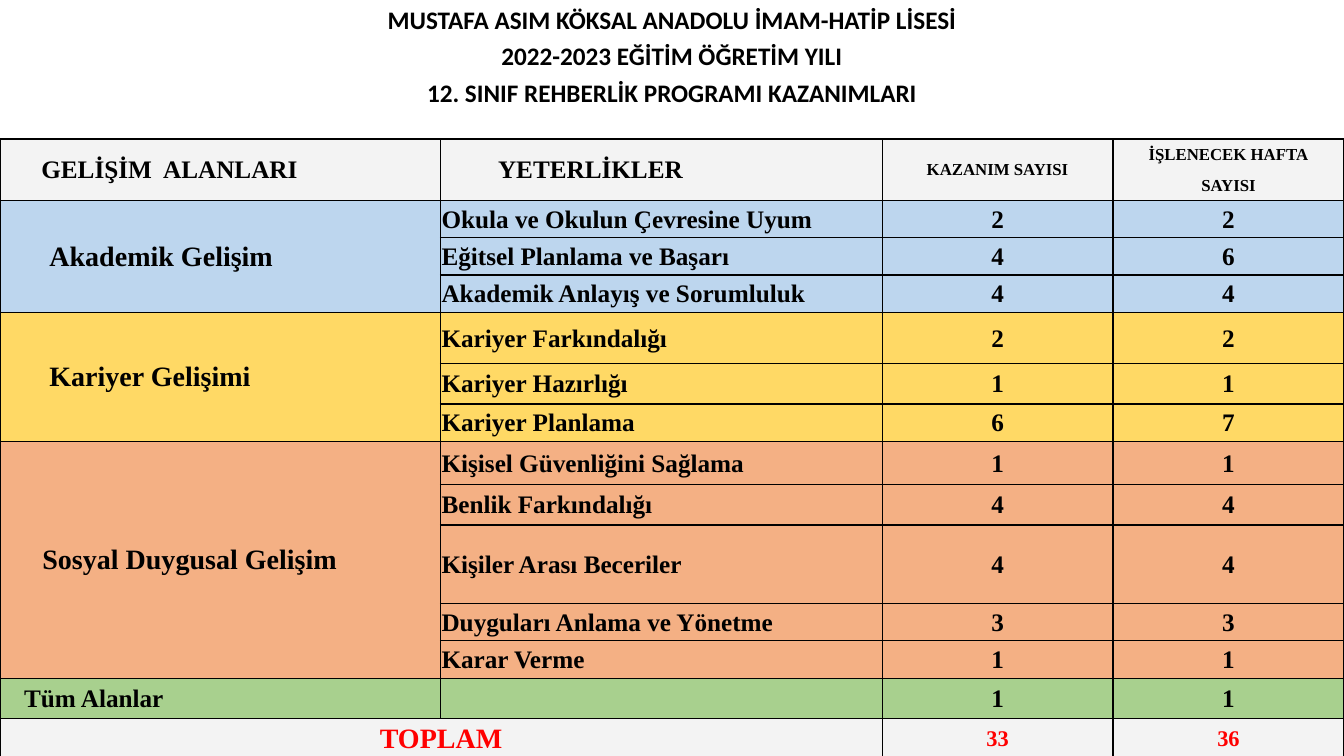
from lxml import etree
from pptx import Presentation
from pptx.dml.color import RGBColor
from pptx.enum import text
from pptx.oxml import ns
from pptx.util import Inches, Pt

BLACK = RGBColor(0x00, 0x00, 0x00)
RED = RGBColor(0xFF, 0x00, 0x00)
GREY = RGBColor(0xF3, 0xF3, 0xF3)
BLUE = RGBColor(0xBD, 0xD6, 0xEE)
YELLOW = RGBColor(0xFF, 0xD9, 0x65)
ORANGE = RGBColor(0xF4, 0xB0, 0x84)
GREEN = RGBColor(0xA8, 0xD0, 0x8E)

COL_WIDTHS = [4.37, 4.38, 2.29, 2.29]
ROW_HEIGHTS = [0.36, 0.36, 0.36, 0.3, 0.3, 0.31, 0.37, 0.37, 0.37, 0.51,
               0.4, 0.37, 0.43, 0.4, 0.78, 0.37, 0.37, 0.4, 0.4]
TITLES = ["MUSTAFA ASIM KÖKSAL ANADOLU İMAM-HATİP LİSESİ",
          "2022-2023 EĞİTİM ÖĞRETİM YILI",
          "12. SINIF REHBERLİK PROGRAMI KAZANIMLARI"]
HEADER_ROW = 4
AREAS = [
    ("Akademik Gelişim", 0.49, 20, BLUE, [
        ("Okula ve Okulun Çevresine Uyum", 2, 2),
        ("Eğitsel Planlama ve Başarı", 4, 6),
        ("Akademik Anlayış ve Sorumluluk", 4, 4)]),
    ("Kariyer Gelişimi", 0.49, 20, YELLOW, [
        ("Kariyer Farkındalığı", 2, 2),
        ("Kariyer Hazırlığı", 1, 1),
        ("Kariyer Planlama", 6, 7)]),
    ("Sosyal Duygusal Gelişim", 0.42, 20, ORANGE, [
        ("Kişisel Güvenliğini Sağlama", 1, 1),
        ("Benlik Farkındalığı", 4, 4),
        ("Kişiler Arası Beceriler", 4, 4),
        ("Duyguları Anlama ve Yönetme", 3, 3),
        ("Karar Verme", 1, 1)]),
    ("Tüm Alanlar", 0.24, 18, GREEN, [("", 1, 1)]),
]


def set_borders(cell, sides):
    """Draw black lines on the given sides and none on the others."""
    tcPr = cell._tc.get_or_add_tcPr()
    for i, side in enumerate("LRTB"):
        ln = etree.Element(ns.qn(f"a:ln{side}"), w=str(Pt(1)))
        if side in sides:
            fill = etree.SubElement(ln, ns.qn("a:solidFill"))
            etree.SubElement(fill, ns.qn("a:srgbClr"), val=str(BLACK))
        else:
            etree.SubElement(ln, ns.qn("a:noFill"))
        tcPr.insert(i, ln)


def border_sides(row, col):
    """Return the sides of a cell that carry a line."""
    if row < HEADER_ROW:
        return "B" if row == HEADER_ROW - 1 else ""
    if col == 3 and row == HEADER_ROW:
        return "LRT"
    if col == 3 and row == HEADER_ROW + 1:
        return "LRB"
    return "LRTB"


def reset_cell(cell, sides):
    """Clear the fill and margins of a cell and set its lines."""
    cell.fill.background()
    cell.margin_left = cell.margin_right = cell.margin_top = Inches(0.01)
    cell.margin_bottom = 0
    cell.vertical_anchor = text.MSO_ANCHOR.MIDDLE
    p = cell.text_frame.paragraphs[0]
    etree.SubElement(p._p, ns.qn("a:endParaRPr"), sz="1000")
    set_borders(cell, sides)


def write(cell, words, size=18, font="Times New Roman", color=BLACK, indent=None):
    """Write bold text, centred unless an indent is given."""
    p = cell.text_frame.paragraphs[0]
    p.text = words
    if indent is None:
        p.alignment = text.PP_ALIGN.CENTER
    else:
        p.alignment = text.PP_ALIGN.LEFT
        cell.margin_left = Inches(indent)
    for r in p.runs:
        r.font.name = font
        r.font.size = Pt(size)
        r.font.bold = True
        r.font.color.rgb = color


def fill_rows(table, first, last, color):
    """Fill all cells of a range of rows."""
    for row in range(first, last + 1):
        for col in range(len(COL_WIDTHS)):
            cell = table.cell(row, col)
            cell.fill.solid()
            cell.fill.fore_color.rgb = color


def add_grid(slide):
    """Add the plain table with its lines."""
    table = slide.shapes.add_table(
        len(ROW_HEIGHTS), len(COL_WIDTHS), 0, 0,
        Inches(sum(COL_WIDTHS)), Inches(sum(ROW_HEIGHTS))).table
    table.first_row = table.horz_banding = False
    for column, width in zip(table.columns, COL_WIDTHS):
        column.width = Inches(width)
    for i, height in enumerate(ROW_HEIGHTS):
        table.rows[i].height = Inches(height)
        for j in range(len(COL_WIDTHS)):
            reset_cell(table.cell(i, j), border_sides(i, j))
    return table


def add_titles(table):
    """Write the title lines across the table."""
    for row, title in enumerate(TITLES):
        cell = table.cell(row, 0)
        cell.merge(table.cell(row, 3))
        cell.vertical_anchor = text.MSO_ANCHOR.BOTTOM
        write(cell, title, font="Calibri")


def add_header(table):
    """Write the column headings over two rows."""
    top, bottom = HEADER_ROW, HEADER_ROW + 1
    fill_rows(table, top, bottom, GREY)
    for col in range(3):
        table.cell(top, col).merge(table.cell(bottom, col))
    write(table.cell(top, 0), "GELİŞİM  ALANLARI", indent=0.41)
    write(table.cell(top, 1), "YETERLİKLER", indent=0.57)
    write(table.cell(top, 2), "KAZANIM SAYISI", 12)
    write(table.cell(top, 3), "İŞLENECEK HAFTA", 12)
    write(table.cell(bottom, 3), "SAYISI", 12)


def add_area(table, first, name, indent, size, color, skills):
    """Write one development area and return the row after it."""
    last = first + len(skills) - 1
    fill_rows(table, first, last, color)
    if last > first:
        table.cell(first, 0).merge(table.cell(last, 0))
    write(table.cell(first, 0), name, size, indent=indent)
    for row, (skill, gains, weeks) in enumerate(skills, first):
        if skill:
            write(table.cell(row, 1), skill, indent=0.01)
        write(table.cell(row, 2), str(gains))
        write(table.cell(row, 3), str(weeks))
    return last + 1


def add_total(table, row):
    """Write the sums of both number columns."""
    fill_rows(table, row, row, GREY)
    table.cell(row, 0).merge(table.cell(row, 1))
    write(table.cell(row, 0), "TOPLAM", 20, color=RED)
    for col in (2, 3):
        total = sum(skill[col - 1] for area in AREAS for skill in area[-1])
        write(table.cell(row, col), str(total), 16, color=RED)


def main():
    """Build the slide and save it."""
    prs = Presentation()
    prs.slide_width, prs.slide_height = Inches(13.33), Inches(7.5)
    slide = prs.slides.add_slide(prs.slide_layouts[6])
    table = add_grid(slide)
    add_titles(table)
    add_header(table)
    row = HEADER_ROW + 2
    for area in AREAS:
        row = add_area(table, row, *area)
    add_total(table, row)
    prs.save("out.pptx")


if __name__ == "__main__":
    main()
